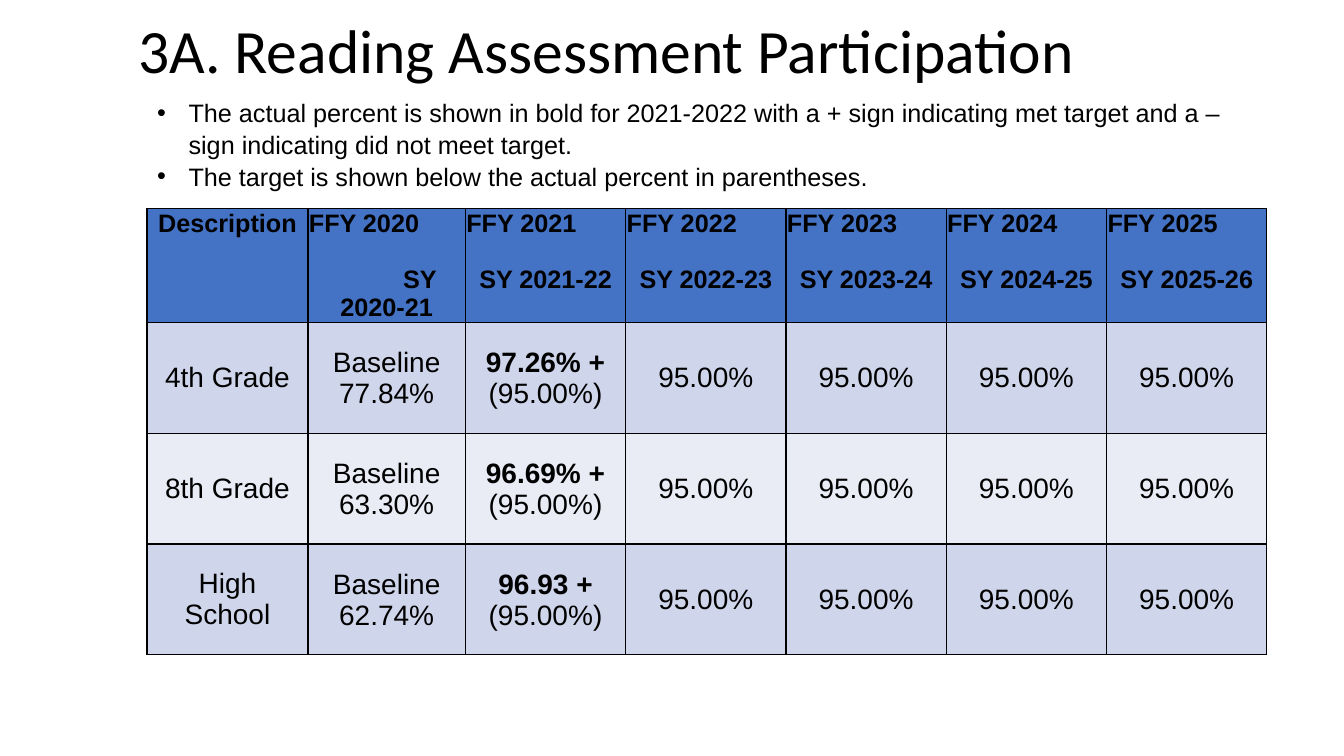
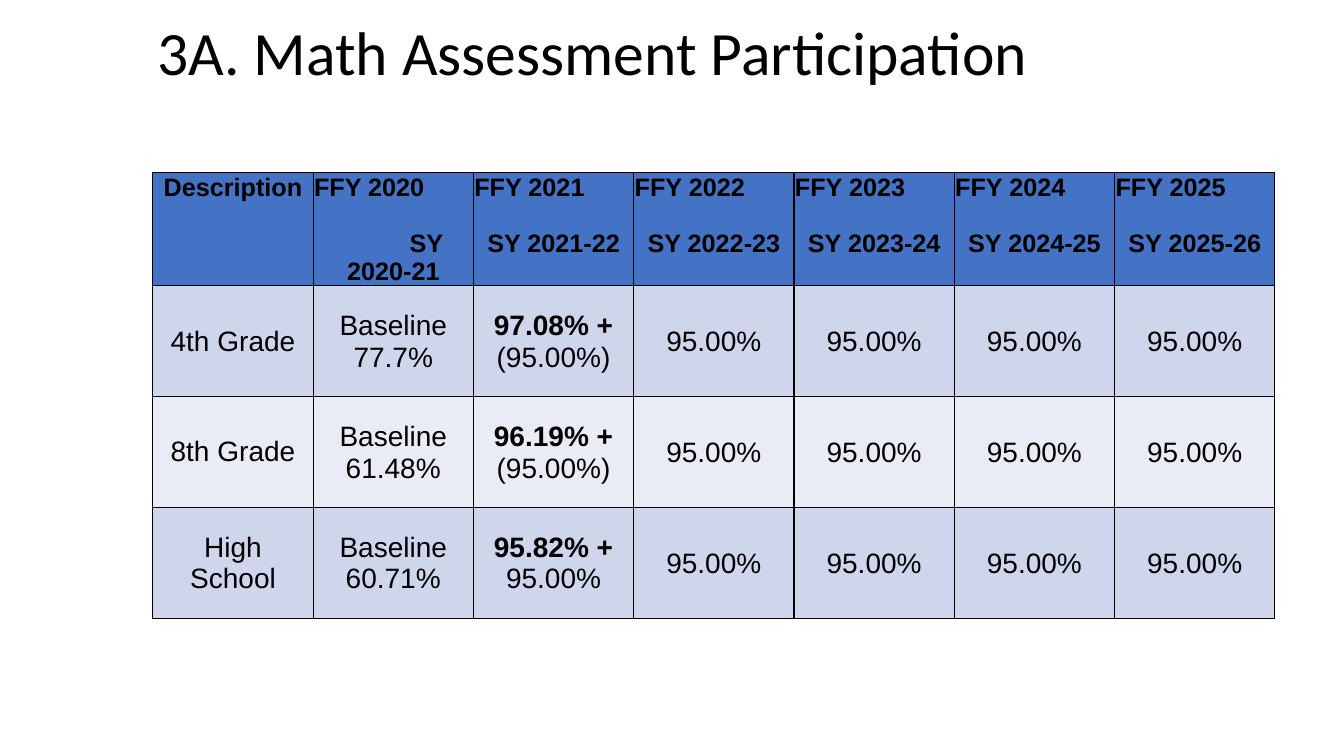
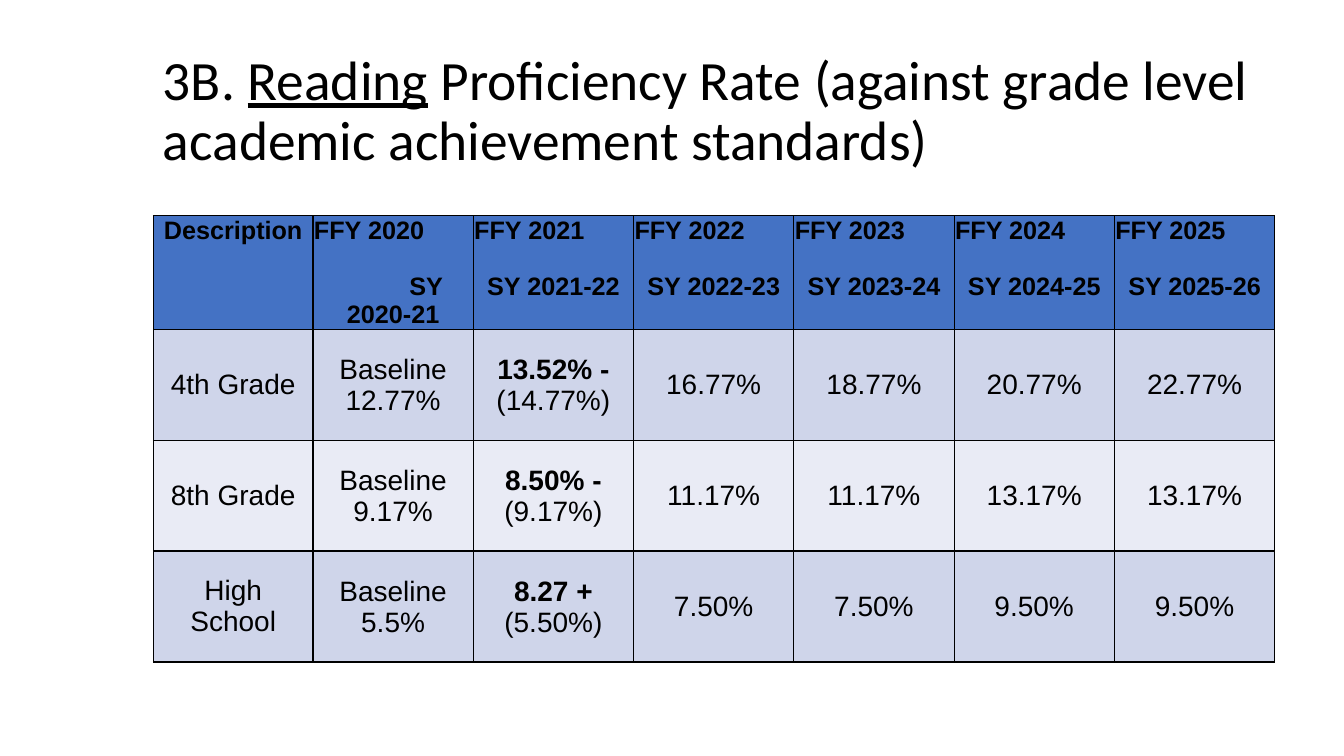
from lxml import etree
from pptx import Presentation
from pptx.dml.color import RGBColor
from pptx.enum.text import MSO_ANCHOR, MSO_AUTO_SIZE, PP_ALIGN
from pptx.oxml.ns import qn
from pptx.util import Pt

LEFT, CENTER = PP_ALIGN.LEFT, PP_ALIGN.CENTER
TOP, MIDDLE = MSO_ANCHOR.TOP, MSO_ANCHOR.MIDDLE
NO_AUTOFIT = MSO_AUTO_SIZE.NONE

BLACK = RGBColor(0x00, 0x00, 0x00)
HEADER_BLUE = RGBColor(0x44, 0x72, 0xC4)
BAND_DARK = RGBColor(0xCF, 0xD5, 0xEA)
BAND_LIGHT = RGBColor(0xE9, 0xEB, 0xF5)

TITLE_FONT, BODY_FONT = "Calibri", "Arial"
CONTENT_LAYOUT, TITLE_LAYOUT = 1, 5
TITLE_SIZE = 44
ROW_HEIGHT = 79.2
COLUMN_WIDTH = 114.5
BORDER_WIDTH = 1
FIRST_YEAR = 2020
YEAR_COUNT = 6
GRADES = ["4th Grade", "8th Grade", "High School"]

NOTES = [
    "The actual percent is shown in bold for 2021-2022 with a + sign indicating met target "
    "and a – sign indicating did not meet target.",
    "The target is shown below the actual percent in parentheses.",
]
READING_PARTICIPATION = [
    ["77.84%", "97.26% +", "(95.00%)"] + ["95.00%"] * 4,
    ["63.30%", "96.69% +", "(95.00%)"] + ["95.00%"] * 4,
    ["62.74%", "96.93 +", "(95.00%)"] + ["95.00%"] * 4,
]
MATH_PARTICIPATION = [
    ["77.7%", "97.08% +", "(95.00%)"] + ["95.00%"] * 4,
    ["61.48%", "96.19% +", "(95.00%)"] + ["95.00%"] * 4,
    ["60.71%", "95.82% +", "95.00%"] + ["95.00%"] * 4,
]
READING_PROFICIENCY = [
    ["12.77%", "13.52% -", "(14.77%)", "16.77%", "18.77%", "20.77%", "22.77%"],
    ["9.17%", "8.50% -", "(9.17%)", "11.17%", "11.17%", "13.17%", "13.17%"],
    ["5.5%", "8.27 +", "(5.50%)", "7.50%", "7.50%", "9.50%", "9.50%"],
]


def add_text(p, text, size=20, font=BODY_FONT, bold=False, underline=False, align=CENTER):
    p.alignment = align
    r = p.add_run()
    r.text = text
    r.font.size = Pt(size)
    r.font.name = font
    r.font.bold = bold
    r.font.underline = underline
    r.font.color.rgb = BLACK


def add_paragraph(tf):
    first = tf.paragraphs[0]
    return tf.add_paragraph() if first.runs else first


def set_indent(p, left, first_line):
    pPr = p._p.get_or_add_pPr()
    pPr.set("marL", str(Pt(left)))
    pPr.set("indent", str(Pt(first_line)))
    return pPr


def place(shape, left, top, width, height):
    shape.left, shape.top = Pt(left), Pt(top)
    shape.width, shape.height = Pt(width), Pt(height)


def add_slide(prs, layout, title, left, top, size=TITLE_SIZE):
    s = prs.slides.add_slide(prs.slide_layouts[layout])
    place(s.shapes.title, left, top, 828, 104.4)
    tf = s.shapes.title.text_frame
    tf.auto_size = NO_AUTOFIT
    tf.word_wrap = True
    tf.vertical_anchor = MIDDLE
    tf.margin_bottom = Pt(3.6 + 1.1 * size)
    p = tf.paragraphs[0]
    p.line_spacing = 0.9
    for text, underline in title:
        add_text(p, text, size=size, font=TITLE_FONT, underline=underline, align=LEFT)
    return s


def add_bullets(s, items, left, top, width, height):
    body = s.placeholders[1]
    place(body, left, top, width, height)
    tf = body.text_frame
    tf.auto_size = NO_AUTOFIT
    tf.vertical_anchor = TOP
    for item in items:
        p = add_paragraph(tf)
        p.space_before = Pt(0)
        p.line_spacing = 1.05
        add_text(p, item, size=18, align=LEFT)
        pPr = set_indent(p, 22.5, -22.5)
        etree.SubElement(pPr, qn("a:buFont")).set("typeface", BODY_FONT)
        etree.SubElement(pPr, qn("a:buChar")).set("char", "•")


def add_borders(cell):
    tcPr = cell._tc.get_or_add_tcPr()
    for side in ("lnL", "lnR", "lnT", "lnB"):
        ln = etree.SubElement(tcPr, qn("a:" + side), w=str(Pt(BORDER_WIDTH)))
        fill = etree.SubElement(ln, qn("a:solidFill"))
        etree.SubElement(fill, qn("a:srgbClr"), val=str(BLACK))


def format_cell(cell, fill, anchor=MIDDLE, tight=True):
    add_borders(cell)
    cell.fill.solid()
    cell.fill.fore_color.rgb = fill
    cell.vertical_anchor = anchor
    if tight:
        cell.margin_left = cell.margin_right = cell.margin_top = Pt(0.7)
        cell.margin_bottom = Pt(0)
    return cell.text_frame


def fill_header(table):
    tf = format_cell(table.cell(0, 0), HEADER_BLUE, anchor=TOP)
    add_text(tf.paragraphs[0], "Description", size=18, bold=True)
    for i in range(YEAR_COUNT):
        year = FIRST_YEAR + i
        tf = format_cell(table.cell(0, i + 1), HEADER_BLUE, anchor=TOP)
        add_text(tf.paragraphs[0], f"FFY {year}", size=18, bold=True, align=LEFT)
        p = tf.add_paragraph()
        p.space_before = Pt(20)
        add_text(p, f"SY {year}-{(year + 1) % 100}", size=18, bold=True)
        if i == 0:
            set_indent(p, 0, 47)


def fill_row(table, row, grade, values):
    band = BAND_DARK if row % 2 else BAND_LIGHT
    baseline, actual, target, *later = values
    tf = format_cell(table.cell(row, 0), band, tight=False)
    add_text(tf.paragraphs[0], grade)
    contents = [[f"Baseline {baseline}"], [actual, target]] + [[value] for value in later]
    for col, lines in enumerate(contents, start=1):
        tf = format_cell(table.cell(row, col), band)
        for line in lines:
            add_text(add_paragraph(tf), line, bold=line == actual)


def add_grade_table(s, rows, left, top, first_widths=(COLUMN_WIDTH, COLUMN_WIDTH)):
    widths = list(first_widths) + [COLUMN_WIDTH] * (YEAR_COUNT - 1)
    row_count = len(rows) + 1
    frame = s.shapes.add_table(row_count, len(widths), Pt(left), Pt(top),
                               Pt(sum(widths)), Pt(ROW_HEIGHT * row_count))
    table = frame.table
    table.first_row = table.horz_banding = False
    for column, width in zip(table.columns, widths):
        column.width = Pt(width)
    for row in table.rows:
        row.height = Pt(ROW_HEIGHT)
    fill_header(table)
    for row, (grade, values) in enumerate(zip(GRADES, rows), start=1):
        fill_row(table, row, grade, values)


def main():
    prs = Presentation()
    prs.slide_width, prs.slide_height = Pt(960), Pt(540)

    s = add_slide(prs, CONTENT_LAYOUT, [("3A. Reading Assessment Participation", False)], 91.4, 10)
    add_grade_table(s, READING_PARTICIPATION, 105, 149, first_widths=(115, 112.5))
    add_bullets(s, NOTES, 105, 65, 800.6, 72.7)

    s = add_slide(prs, TITLE_LAYOUT, [("3A. Math Assessment Participation", False)], 105, 11.5)
    add_grade_table(s, MATH_PARTICIPATION, 109.2, 123)

    title = [("3B. ", False), ("Reading", True),
             (" Proficiency Rate (against grade level academic achievement standards)", False)]
    s = add_slide(prs, TITLE_LAYOUT, title, 109.2, 49.7, size=39.6)
    add_grade_table(s, READING_PROFICIENCY, 109.6, 154, first_widths=(114, COLUMN_WIDTH))

    prs.save("out.pptx")


if __name__ == "__main__":
    main()
